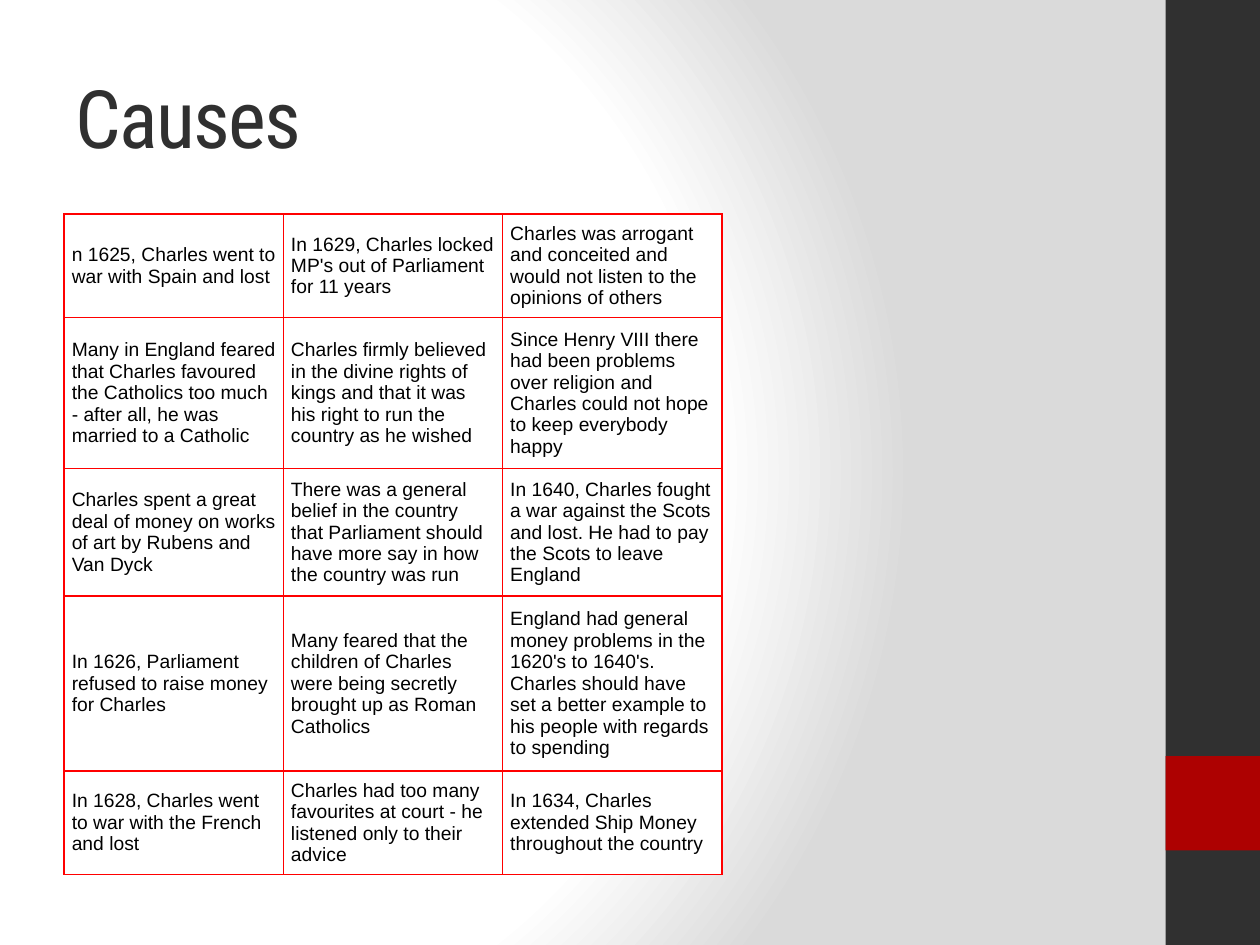
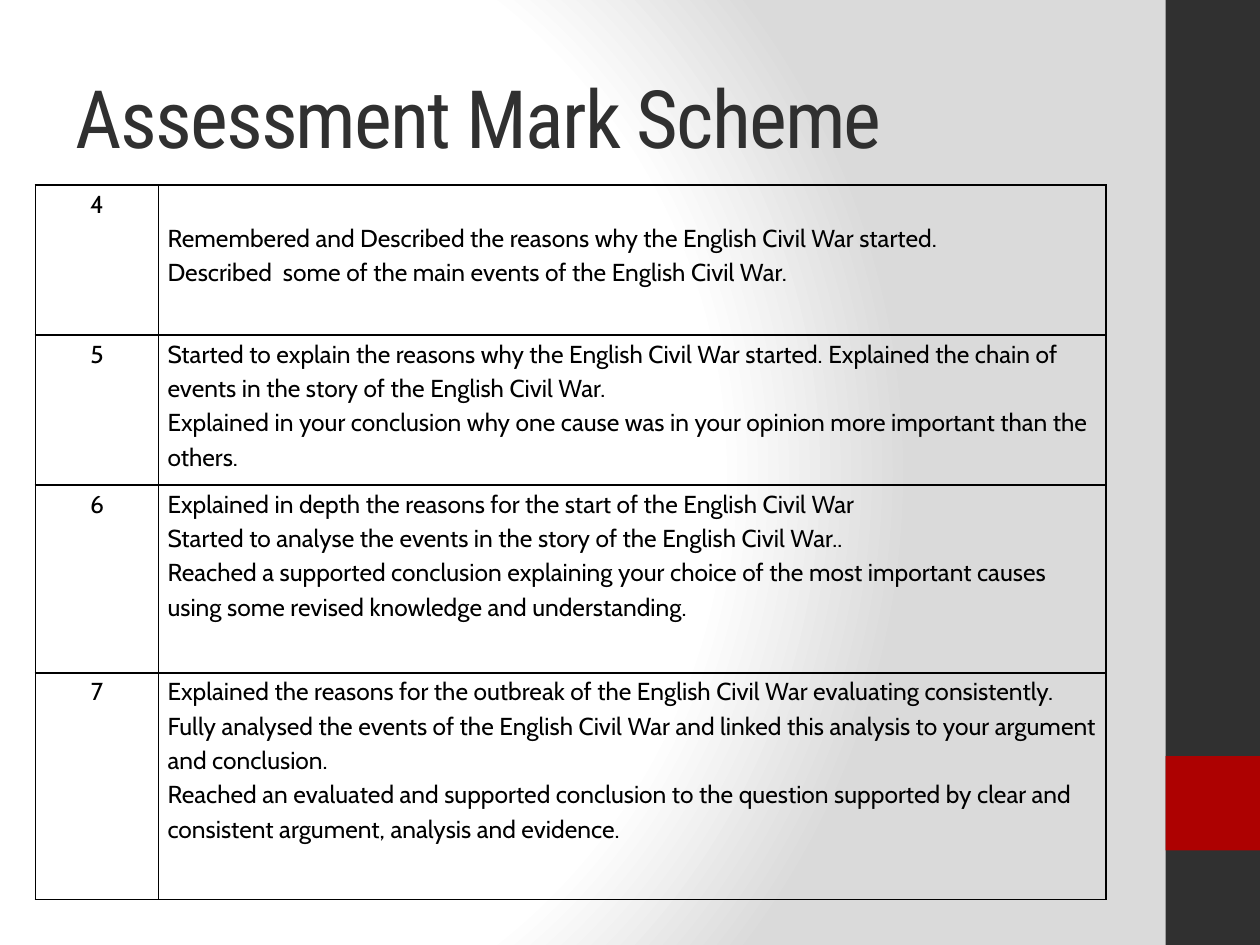
import lxml.etree
import pptx
import pptx.dml.color
import pptx.enum.shapes
import pptx.enum.text
import pptx.oxml
import pptx.oxml.ns
import pptx.util

Inches = pptx.util.Inches
ANCHOR = pptx.enum.text.MSO_ANCHOR
ALIGN = pptx.enum.text.PP_ALIGN
qn = pptx.oxml.ns.qn

COLOURS = {
    "dark": "303030",
    "accent": "AD0101",
    "black": "000000",
    "white": "FFFFFF",
    "grey": "DADADA",
    "red": "FF0000",
}
TITLE_BOX = (0.5, 0.3, 8.33, 1.25)
BAND_BOX = (9.25, 0, 0.75, 7.5)

CAUSES = [
    ["n 1625, Charles went to war with Spain and lost",
     "In 1629, Charles locked MP's out of Parliament for 11 years",
     "Charles was arrogant and conceited and would not listen to the opinions of others"],
    ["Many in England feared that Charles favoured the Catholics too much - "
     "after all, he was married to a Catholic",
     "Charles firmly believed in the divine rights of kings and that it was his right "
     "to run the country as he wished",
     "Since Henry VIII there had been problems over religion and Charles could not hope "
     "to keep everybody happy"],
    ["Charles spent a great deal of money on works of art by Rubens and Van Dyck",
     "There was a general belief in the country that Parliament should have more say "
     "in how the country was run",
     "In 1640, Charles fought a war against the Scots and lost. He had to pay the Scots "
     "to leave England"],
    ["In 1626, Parliament refused to raise money for Charles",
     "Many feared that the children of Charles were being secretly brought up as Roman Catholics",
     "England had general money problems in the 1620's to 1640's. Charles should have set "
     "a better example to his people with regards to spending"],
    ["In 1628, Charles went to war with the French and lost",
     "Charles had too many favourites at court - he listened only to their advice",
     "In 1634, Charles extended Ship Money throughout the country"],
]

MARK_SCHEME = {
    "4": ["Remembered and Described the reasons why the English Civil War started.",
          "Described  some of the main events of the English Civil War."],
    "5": ["Started to explain the reasons why the English Civil War started. "
          "Explained the chain of events in the story of the English Civil War.",
          "Explained in your conclusion why one cause was in your opinion more important "
          "than the others."],
    "6": ["Explained in depth the reasons for the start of the English Civil War",
          "Started to analyse the events in the story of the English Civil War..",
          "Reached a supported conclusion explaining your choice of the most important causes "
          "using some revised knowledge and understanding."],
    "7": ["Explained the reasons for the outbreak of the English Civil War evaluating consistently.",
          "Fully analysed the events of the English Civil War and linked this analysis to your "
          "argument and conclusion.",
          "Reached an evaluated and supported conclusion to the question supported by clear and "
          "consistent argument, analysis and evidence."],
}


def rgb(name):
    return pptx.dml.color.RGBColor.from_string(COLOURS[name])


def write_text(frame, lines, font, size, colour="black", align=ALIGN.LEFT,
               line_spacing=None, tracking=None):
    """Write one paragraph for each line."""
    frame.word_wrap = True
    for index, line in enumerate(lines):
        para = frame.add_paragraph() if index else frame.paragraphs[0]
        para.alignment = align
        para.line_spacing = line_spacing
        span = para.add_run()
        span.text = line
        span.font.name = font
        span.font.size = pptx.util.Pt(size)
        span.font.color.rgb = rgb(colour)
        if tracking:
            span.font._element.set("spc", str(tracking * 100))


def set_background(master):
    """Give every page the white to grey glow."""
    master.background.fill.solid()
    properties = master.element.find(".//" + qn("p:bgPr"))
    properties.remove(properties.find(qn("a:solidFill")))
    stops = "".join(
        f'<a:gs pos="{percent * 1000}"><a:srgbClr val="{COLOURS[name]}"/></a:gs>'
        for percent, name in [(0, "white"), (75, "white"), (100, "grey")])
    properties.insert(0, pptx.oxml.parse_xml(
        f'<a:gradFill {pptx.oxml.ns.nsdecls("a")} rotWithShape="1"><a:gsLst>{stops}</a:gsLst>'
        '<a:path path="circle"><a:fillToRect l="20000" t="50000" r="100000" b="50000"/>'
        '</a:path></a:gradFill>'))


def add_block(page, box, colour):
    block = page.shapes.add_shape(pptx.enum.shapes.MSO_SHAPE.RECTANGLE, *map(Inches, box))
    block.shadow.inherit = False
    block.fill.solid()
    block.fill.fore_color.rgb = rgb(colour)
    block.line.fill.background()


def add_side_band(page, box):
    """Dark band with a square accent one band width above the foot."""
    left, top, width, height = box
    add_block(page, box, "dark")
    add_block(page, (left, top + height - 2 * width, width, width), "accent")


def add_page(deck, title):
    page = deck.slides.add_slide(deck.slide_layouts[5])
    add_side_band(page, BAND_BOX)
    heading = page.shapes.title
    heading.left, heading.top, heading.width, heading.height = map(Inches, TITLE_BOX)
    heading.text_frame.vertical_anchor = ANCHOR.MIDDLE
    heading.text_frame.auto_size = pptx.enum.text.MSO_AUTO_SIZE.NONE
    write_text(heading.text_frame, [title], "Roboto Condensed", 46, "dark", tracking=-1)
    return page


def set_borders(cell, colour):
    properties = cell._tc.get_or_add_tcPr()
    for index, side in enumerate(("lnL", "lnR", "lnT", "lnB")):
        border = lxml.etree.Element(qn("a:" + side), w=str(pptx.util.Pt(1)))
        fill = lxml.etree.SubElement(border, qn("a:solidFill"))
        lxml.etree.SubElement(fill, qn("a:srgbClr"), val=COLOURS[colour])
        properties.insert(index, border)


def add_grid(page, box, columns, rows, margins, border, fill=None):
    """Add a plain bordered table; column widths and row heights are in inches."""
    grid = page.shapes.add_table(len(rows), len(columns), *map(Inches, box)).table
    grid.first_row = grid.horz_banding = False
    for column, width in zip(grid.columns, columns):
        column.width = Inches(width)
    for row, height in zip(grid.rows, rows):
        row.height = Inches(height)
    for cell in grid.iter_cells():
        cell.margin_left = cell.margin_right = Inches(margins[0])
        cell.margin_top = cell.margin_bottom = Inches(margins[1])
        if fill:
            cell.fill.solid()
            cell.fill.fore_color.rgb = rgb(fill)
        else:
            cell.fill.background()
        set_borders(cell, border)
    return grid


def add_causes(page, box):
    grid = add_grid(page, box, [box[2] / 3] * 3, [0.82, 1.2, 1.01, 1.39, 0.82],
                    (0.06, 0.03), "red", "white")
    for row, causes in enumerate(CAUSES):
        for column, cause in enumerate(causes):
            cell = grid.cell(row, column)
            cell.vertical_anchor = ANCHOR.MIDDLE
            write_text(cell.text_frame, [cause], "Arial", 11)


def add_mark_scheme(page, box):
    level_width = 0.98
    grid = add_grid(page, box, [level_width, box[2] - level_width], [1.19, 1.19, 1.49, 1.8],
                    (0.07, 0), "black")
    for row, (level, criteria) in enumerate(MARK_SCHEME.items()):
        write_text(grid.cell(row, 0).text_frame, [level], "Cabin", 14,
                   align=ALIGN.CENTER, line_spacing=1.15)
        write_text(grid.cell(row, 1).text_frame, criteria, "Cabin", 14, line_spacing=1.15)
    # The first criteria start one line lower
    grid.cell(0, 1).margin_top = Inches(0.27)


def main():
    deck = pptx.Presentation()
    deck.slide_width, deck.slide_height = Inches(10), Inches(7.5)
    set_background(deck.slide_master)
    add_causes(add_page(deck, "Causes"), (0.51, 1.7, 5.22, 5.25))
    add_mark_scheme(add_page(deck, "Assessment Mark Scheme"), (0.28, 1.47, 8.5, 5.67))
    deck.save("out.pptx")


if __name__ == "__main__":
    main()
